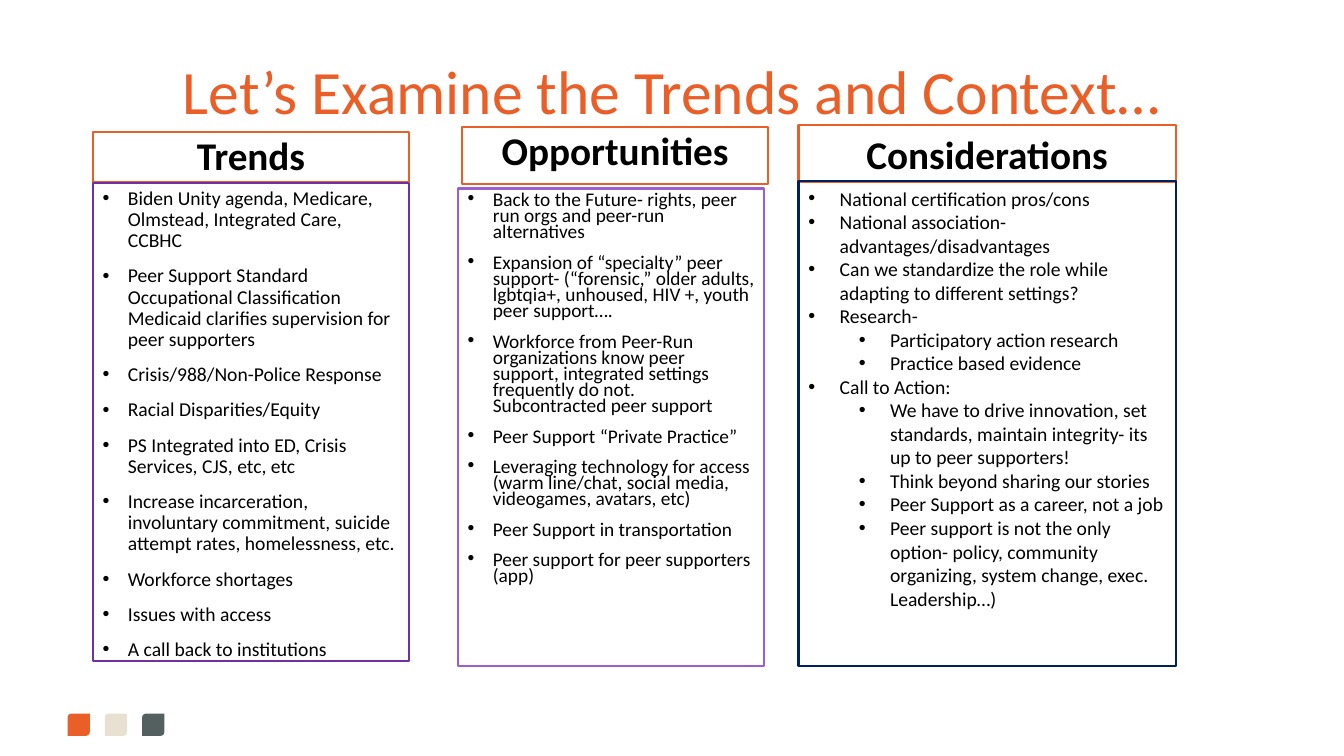
from lxml.etree import SubElement
from pptx import Presentation
from pptx.dml.color import RGBColor
from pptx.enum.shapes import MSO_SHAPE
from pptx.enum.text import MSO_ANCHOR, MSO_AUTO_SIZE, PP_ALIGN
from pptx.oxml.ns import qn
from pptx.util import Emu, Pt

PX = 9144
ORANGE = "EA5E28"

TRENDS = [
    "Biden Unity agenda, Medicare, Olmstead, Integrated Care, CCBHC",
    "Peer Support Standard Occupational Classification Medicaid clarifies supervision for peer supporters",
    "Crisis/988/Non-Police Response",
    "Racial Disparities/Equity",
    "PS Integrated into ED, Crisis Services, CJS, etc, etc",
    "Increase incarceration, involuntary commitment, suicide attempt rates, homelessness, etc.",
    "Workforce shortages",
    "Issues with access",
    "A call back to institutions",
]
CHANCES = [
    "Back to the Future- rights, peer run orgs and peer-run alternatives",
    "Expansion of “specialty” peer support- (“forensic,” older adults, lgbtqia+, unhoused, HIV +, youth peer support….",
    "Workforce from Peer-Run organizations know peer support, integrated settings frequently do not.\nSubcontracted peer support",
    "Peer Support “Private Practice”",
    "Leveraging technology for access (warm line/chat, social media, videogames, avatars, etc)",
    "Peer Support in transportation",
    "Peer support for peer supporters (app)",
]
POINTS = [
    "National certification pros/cons",
    "National association- advantages/disadvantages",
    "Can we standardize the role while adapting to different settings?",
    "Research-",
    ["Participatory action research", "Practice based evidence"],
    "Call to Action:",
    [
        "We have to drive innovation, set standards, maintain integrity- its up to peer supporters!",
        "Think beyond sharing our stories",
        "Peer Support as a career, not a job",
        "Peer support is not the only option- policy, community organizing, system change, exec. Leadership…)",
    ],
]


def color(code):
    return RGBColor.from_string(code)


def px(n):
    return Emu(n * PX)


class Deck:
    font = "Calibri"
    ink = "000000"

    def __init__(self, wide, high):
        self.file = Presentation()
        self.file.slide_width = px(wide)
        self.file.slide_height = px(high)
        self.slide = self.file.slides.add_slide(self.file.slide_layouts[5])

    def text(self, para, words, size, tint=ink, bold=False):
        for i, line in enumerate(words.split("\n")):
            if i:
                para.add_line_break()
            run = para.add_run()
            run.text = line
            run.font.name = self.font
            run.font.size = Pt(size)
            run.font.bold = bold
            run.font.color.rgb = color(tint)

    def title(self, box, words):
        shape = self.slide.shapes.title
        shape.left, shape.top, shape.width, shape.height = map(px, box)
        frame = shape.text_frame
        frame.word_wrap = True
        frame.auto_size = MSO_AUTO_SIZE.NONE
        frame.vertical_anchor = MSO_ANCHOR.MIDDLE
        para = frame.paragraphs[0]
        para.alignment = PP_ALIGN.CENTER
        para.line_spacing = 0.9
        self.text(para, words, 44, ORANGE)

    def shape(self, kind, box, fill=None, line=None):
        shape = self.slide.shapes.add_shape(kind, *map(px, box))
        shape.shadow.inherit = False
        if fill:
            shape.fill.solid()
            shape.fill.fore_color.rgb = color(fill)
        else:
            shape.fill.background()
        if line:
            shape.line.color.rgb = color(line)
            shape.line.width = Pt(1.5)
        else:
            shape.line.fill.background()
        return shape

    def frame(self, box, line):
        frame = self.shape(MSO_SHAPE.RECTANGLE, box, line=line).text_frame
        frame.word_wrap = True
        frame.vertical_anchor = MSO_ANCHOR.TOP
        return frame

    def head(self, box, words, lead):
        para = self.frame(box, ORANGE).paragraphs[0]
        para.alignment = PP_ALIGN.CENTER
        para.line_spacing = lead
        self.text(para, words, 28, bold=True)

    def bullet(self, para, left, hang):
        props = para._p.get_or_add_pPr()
        props.set("marL", str(px(left)))
        props.set("indent", str(px(-hang)))
        SubElement(props, qn("a:buFont")).set("typeface", "Arial")
        SubElement(props, qn("a:buChar")).set("char", "•")

    def items(self, box, line, items, size, lead, gap, hang):
        frame = self.frame(box, line)
        rows = []
        for item in items:
            rows += [(1, sub) for sub in item] if isinstance(item, list) else [(0, item)]
        for i, (level, words) in enumerate(rows):
            para = frame.add_paragraph() if i else frame.paragraphs[0]
            self.bullet(para, hang + 50 * level, hang)
            para.level = level
            para.alignment = PP_ALIGN.LEFT
            para.line_spacing = lead
            para.space_before = Pt(gap if i else 0)
            self.text(para, words, size)

    def save(self):
        self.file.save("out.pptx")


def main():
    deck = Deck(1333, 750)
    for i, fill in enumerate([ORANGE, "E8E0D1", "53605F"]):
        deck.shape(MSO_SHAPE.ROUND_2_DIAG_RECTANGLE, (67 + 37 * i, 708, 22, 22), fill)
    deck.title((67, 21, 1199, 145), "Let’s Examine the Trends and Context…")
    deck.head((92, 131, 314, 50), "Trends", 0.9)
    deck.head((458, 126, 304, 57), "Opportunities", 0.9)
    deck.head((792, 124, 374, 57), "Considerations", 1.0)
    deck.items((92, 182, 314, 474), "7030A0", TRENDS, 14, 0.9, 10, 25)
    deck.items((454, 187, 304, 474), "9E5DCF", CHANCES, 13.8, 0.7, 10, 25)
    deck.items((792, 180, 374, 481), "002060", POINTS, 14, 1.0, 0, 31)
    deck.save()


if __name__ == "__main__":
    main()
